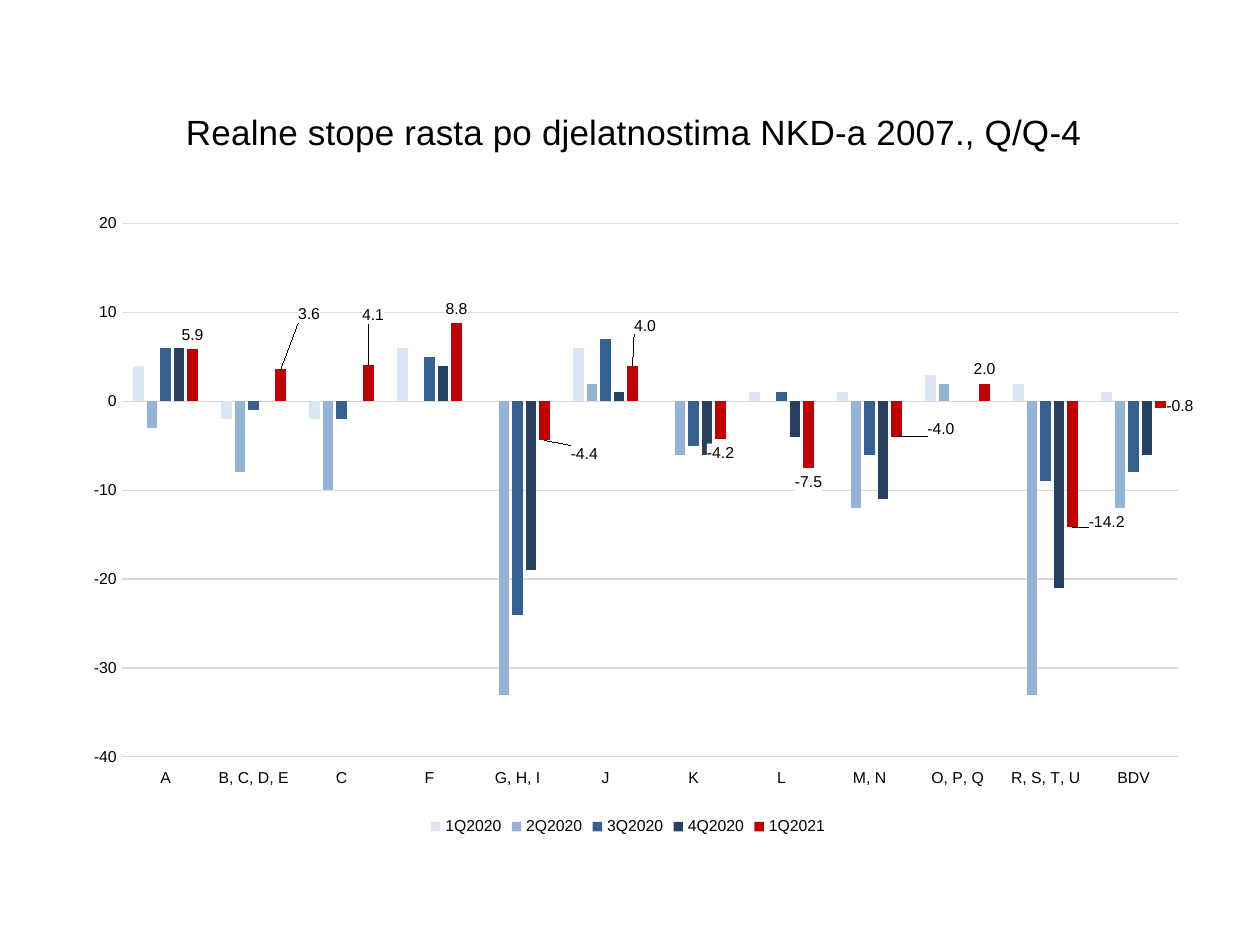
from lxml import etree
from pptx import Presentation
from pptx import util as u
from pptx.chart import data
from pptx.dml import color
from pptx.enum import chart as kinds
from pptx.oxml import ns, parse_xml

SCALE = 914400 / 126
WIDTH, HEIGHT = 1138, 764


def paint(target, value):
    target.rgb = color.RGBColor.from_string(value)


def style(font, size):
    font.name = "Arial"
    font.size = u.Pt(size)
    font.bold = False
    paint(font.color, "000000") if font.fill.solid() is None else None


def px(value):
    return u.Emu(round(value * SCALE))


presentation = Presentation()
presentation.slide_width = px(1260)
presentation.slide_height = px(945)
slide = presentation.slides.add_slide(presentation.slide_layouts[6])

series_table = [
    ("1Q2020", "DCE6F2", [4, -2, -2, 6, 0, 6, 0, 1, 1, 3, 2, 1]),
    ("2Q2020", "95B3D7", [-3, -8, -10, 0, -33, 2, -6, 0, -12, 2, -33, -12]),
    ("3Q2020", "376092", [6, -1, -2, 5, -24, 7, -5, 1, -6, 0, -9, -8]),
    ("4Q2020", "254061", [6, 0, 0, 4, -19, 1, -6, -4, -11, 0, -21, -6]),
    ("1Q2021", "C00000", [5.9, 3.6, 4.1, 8.8, -4.4, 4, -4.2, -7.5, -4, 2, -14.2, -0.8]),
]
chart_data = data.CategoryChartData()
chart_data.categories = ["A", "B, C, D, E", "C", "F", "G, H, I", "J", "K", "L",
                         "M, N", "O, P, Q", "R, S, T, U", "BDV"]
for name, fill, values in series_table:
    chart_data.add_series(name, values)

chart = slide.shapes.add_chart(kinds.XL_CHART_TYPE.COLUMN_CLUSTERED, px(59), px(77),
                               px(WIDTH), px(HEIGHT), chart_data).chart
style(chart.font, 10)

chart.has_title = True
run = chart.chart_title.text_frame.paragraphs[0].add_run()
run.text = "Realne stope rasta po djelatnostima NKD-a 2007., Q/Q-4"
style(run.font, 20)
chart.chart_title.include_in_layout = False

chart.has_legend = True
chart.legend.position = kinds.XL_LEGEND_POSITION.BOTTOM
chart.legend.include_in_layout = False
style(chart.legend.font, 9)

category_axis, value_axis = chart.category_axis, chart.value_axis
for axis in (category_axis, value_axis):
    axis.major_tick_mark = kinds.XL_TICK_MARK.NONE
    axis.minor_tick_mark = kinds.XL_TICK_MARK.NONE
    style(axis.tick_labels.font, 9)
category_axis.tick_label_position = kinds.XL_TICK_LABEL_POSITION.LOW
value_axis.minimum_scale = -40
value_axis.maximum_scale = 20
value_axis.major_unit = 10
value_axis.tick_labels.number_format = "0"
value_axis.tick_labels.number_format_is_linked = False
value_axis.format.line.fill.background()
for line in (category_axis.format.line, value_axis.major_gridlines.format.line):
    line.width = u.Pt(0.75)
    line.fill.solid()
    paint(line.color, "D9D9D9")

plot = chart.plots[0]
plot.gap_width = 219
plot.overlap = -27
plot.vary_by_categories = False
for series, (name, fill, values) in zip(plot.series, series_table):
    series.invert_if_negative = False
    series.format.fill.solid()
    paint(series.format.fill.fore_color, fill)

latest = plot.series[4]
labels = latest.data_labels
labels.show_value = True
labels.number_format = "0.0"
labels.number_format_is_linked = False
labels.position = kinds.XL_LABEL_POSITION.OUTSIDE_END
style(labels.font, 9)

CHART_NS = ns.nsdecls("c")
white = (f'<c:spPr {ns.nsdecls("c", "a")}><a:solidFill><a:srgbClr val="FFFFFF"/></a:solidFill>'
         '<a:ln><a:noFill/></a:ln></c:spPr>')
number_format = f'<c:numFmt {CHART_NS} formatCode="0.0" sourceLinked="0"/>'
labels_element = latest._element.find(ns.qn("c:dLbls"))
labels_element.find(ns.qn("c:numFmt")).addnext(parse_xml(white))

label_shifts = {1: (28, -41), 2: (5, -36), 4: (40, 0), 5: (12, -26),
                8: (44, -22), 10: (34, -20), 11: (19, -17)}
for index, (right, down) in label_shifts.items():
    label = latest.points[index].data_label
    label.position = kinds.XL_LABEL_POSITION.OUTSIDE_END
    style(label.font, 9)
for element in labels_element.findall(ns.qn("c:dLbl")):
    anchor = element.find(ns.qn("c:idx"))
    right, down = label_shifts[int(anchor.get("val"))]
    layout = (f'<c:layout {CHART_NS}><c:manualLayout><c:x val="{right / WIDTH:.3f}"/>'
              f'<c:y val="{down / HEIGHT:.3f}"/></c:manualLayout></c:layout>')
    for old in element.findall(ns.qn("c:spPr")):
        element.remove(old)
    for part in (white, number_format, layout):
        anchor.addnext(parse_xml(part))

plot_area = chart._chartSpace.chart.plotArea
title_element = chart.chart_title._element
placements = [
    (plot_area, {"layoutTarget": "inner", "xMode": "edge", "yMode": "edge",
                 "x": 0.055, "y": 0.192, "w": 0.928, "h": 0.698}),
    (title_element, {"xMode": "edge", "yMode": "edge", "x": 0.106, "y": 0.035}),
]
for element, settings in placements:
    for old in element.findall(ns.qn("c:layout")):
        element.remove(old)
    layout = parse_xml(f"<c:layout {CHART_NS}><c:manualLayout/></c:layout>")
    for key, value in settings.items():
        etree.SubElement(layout[0], ns.qn(f"c:{key}")).set("val", str(value))
    text_element = element.find(ns.qn("c:tx"))
    if text_element is None:
        element.insert(0, layout)
    else:
        text_element.addnext(layout)

presentation.save("out.pptx")
